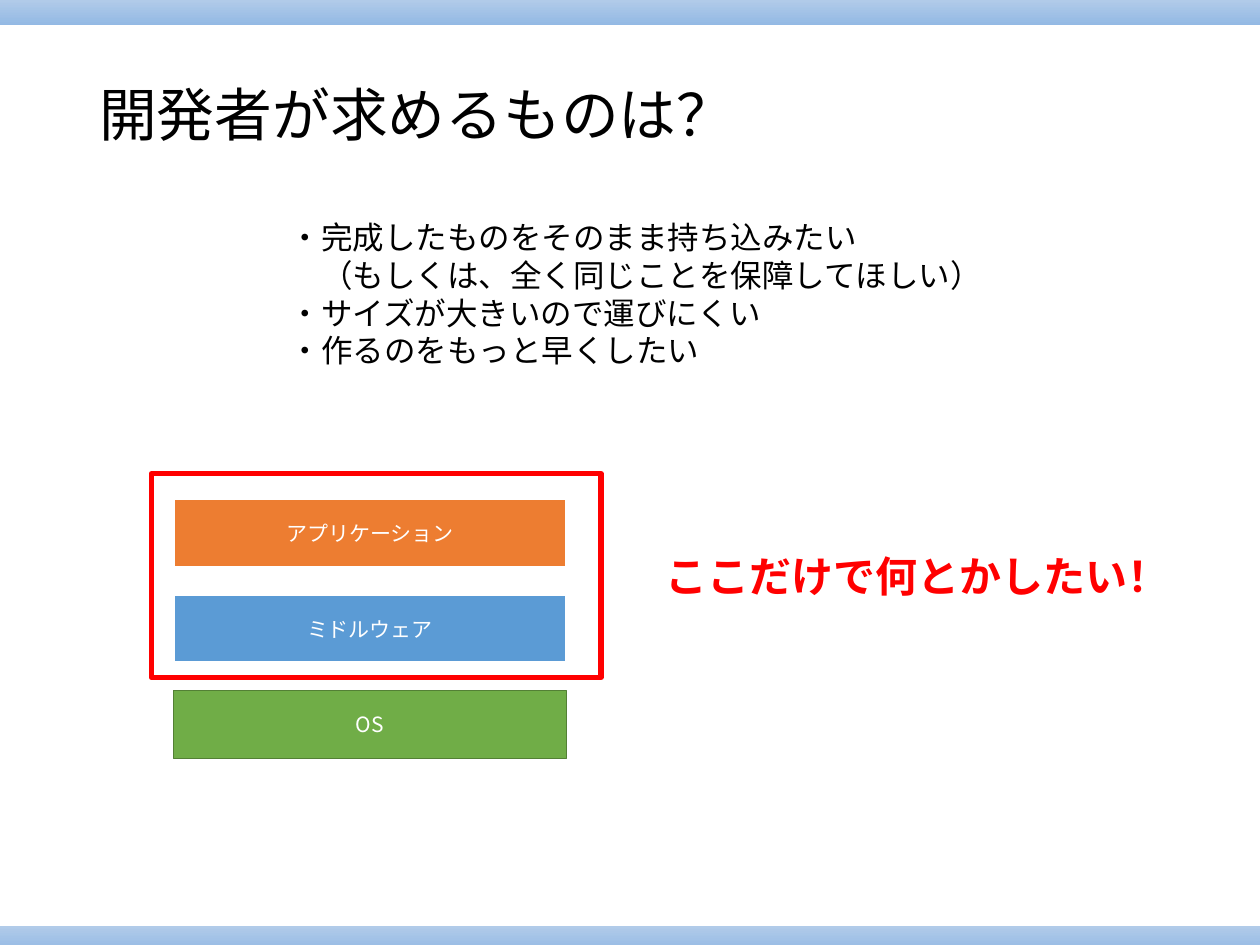
import pptx
import pptx.dml.color
import pptx.enum.shapes
import pptx.enum.text
import pptx.oxml
import pptx.oxml.ns
import pptx.util
from pptx.util import Cm

FONT = "Noto Sans CJK JP"
RECTANGLE = pptx.enum.shapes.MSO_SHAPE.RECTANGLE
ALIGN = pptx.enum.text.PP_ALIGN
ANCHOR = pptx.enum.text.MSO_ANCHOR


def color(hex_string):
    return pptx.dml.color.RGBColor.from_string(hex_string)


def write(box, text, size, ink="000000", bold=False, align=ALIGN.LEFT,
          anchor=ANCHOR.TOP, wrap=True, line_spacing=None):
    """Fill the box with one paragraph per line of text."""
    frame = box.text_frame
    frame.word_wrap = wrap
    frame.vertical_anchor = anchor
    for number, line in enumerate(text.split("\n")):
        para = frame.add_paragraph() if number else frame.paragraphs[0]
        para.alignment = align
        para.line_spacing = line_spacing
        span = para.add_run()
        span.text = line
        span.font.name = FONT
        span.font.size = pptx.util.Pt(size)
        span.font.bold = bold
        span.font.color.rgb = color(ink)
        # Japanese characters take the East Asian typeface
        east_asian = pptx.oxml.parse_xml(
            f'<a:ea {pptx.oxml.ns.nsdecls("a")} typeface="{FONT}"/>')
        span.font._element.find(pptx.oxml.ns.qn("a:latin")).addnext(east_asian)


deck = pptx.Presentation()
deck.slide_width = Cm(25.4)
deck.slide_height = Cm(19.05)
page = deck.slides.add_slide(deck.slide_layouts[6])
shapes = page.shapes

# Bars along the bottom and top edges
for top in (18.67, 0):
    bar = shapes.add_shape(RECTANGLE, 0, Cm(top), deck.slide_width, Cm(0.51))
    bar.shadow.inherit = False
    bar.line.fill.background()
    bar.fill.gradient()
    bar.fill.gradient_angle = 270
    for stop, shade in zip(bar.fill.gradient_stops, ("B1CBE9", "93B9E4")):
        stop.color.rgb = color(shade)

title = shapes.add_textbox(Cm(1.75), Cm(1.45), Cm(21.9), Cm(1.85))
write(title, "開発者が求めるものは？", 33, anchor=ANCHOR.MIDDLE, line_spacing=0.9)

wishes = shapes.add_textbox(Cm(5.59), Cm(4.27), Cm(14.63), Cm(3.33))
write(wishes, """・完成したものをそのまま持ち込みたい
　（もしくは、全く同じことを保障してほしい）
・サイズが大きいので運びにくい
・作るのをもっと早くしたい""", 18, wrap=False)

# Software stack, from the top layer down
layers = [
    ("アプリケーション", "ED7D31", "FFFFFF", 1.5),
    ("ミドルウェア", "5B9BD5", "FFFFFF", 1.5),
    ("OS", "70AD47", "538035", 1),
]
for row, (name, fill, outline, line_width) in enumerate(layers):
    layer = shapes.add_shape(RECTANGLE, Cm(3.5), Cm(10.06 + 1.93 * row),
                             Cm(7.92), Cm(1.37))
    layer.shadow.inherit = False
    layer.fill.solid()
    layer.fill.fore_color.rgb = color(fill)
    layer.line.color.rgb = color(outline)
    layer.line.width = pptx.util.Pt(line_width)
    write(layer, name, 12, ink="FFFFFF", align=ALIGN.CENTER, anchor=ANCHOR.MIDDLE)

# Frame around the two layers of interest
frame_box = shapes.add_shape(RECTANGLE, Cm(3.05), Cm(9.55), Cm(9.07), Cm(4.11))
frame_box.shadow.inherit = False
frame_box.fill.background()
frame_box.line.color.rgb = color("FF0000")
frame_box.line.width = pptx.util.Pt(3)

callout = shapes.add_textbox(Cm(13.16), Cm(10.97), Cm(10.77), Cm(1.27))
write(callout, "ここだけで何とかしたい！", 24, ink="FF0000", bold=True, wrap=False)

deck.save("out.pptx")
